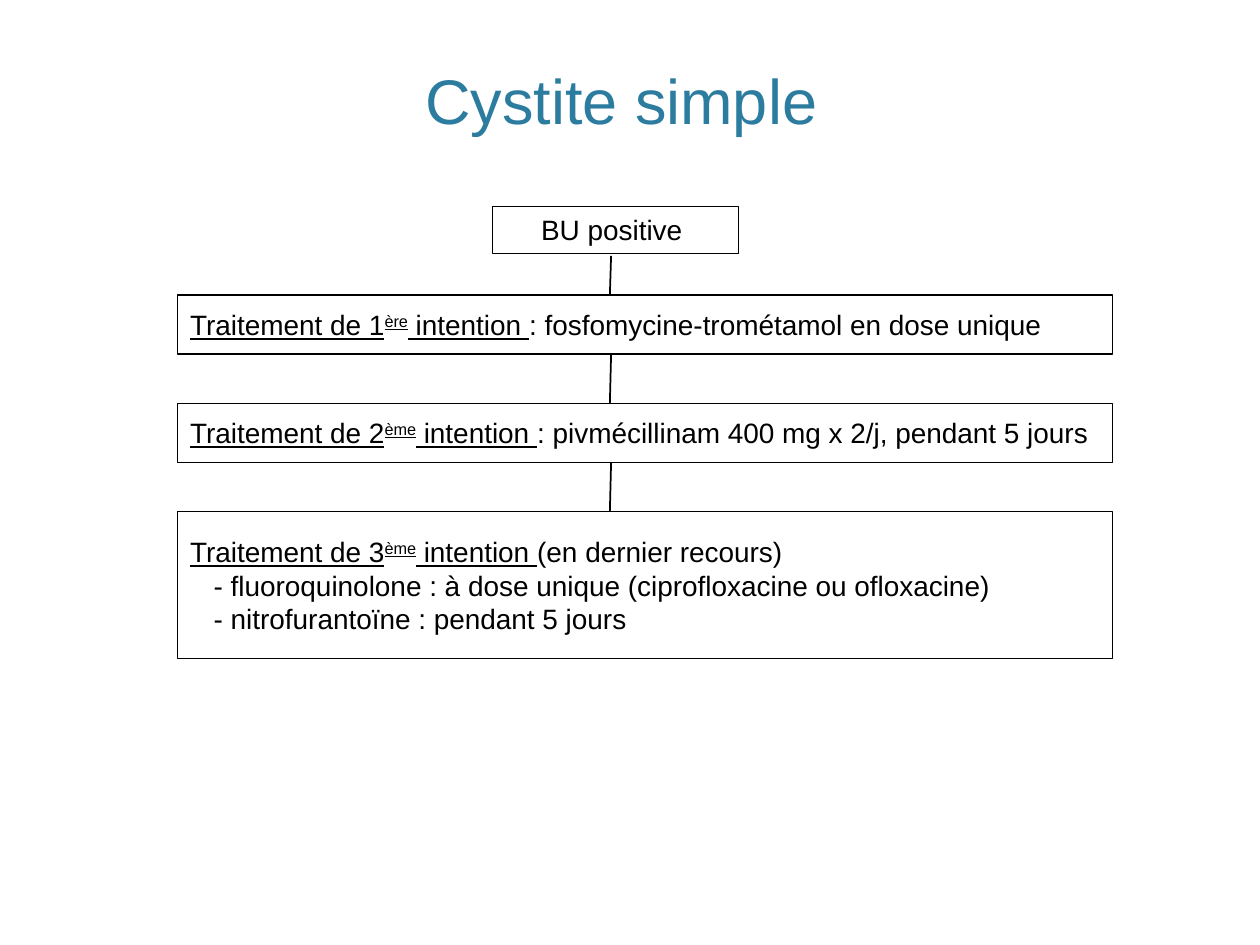
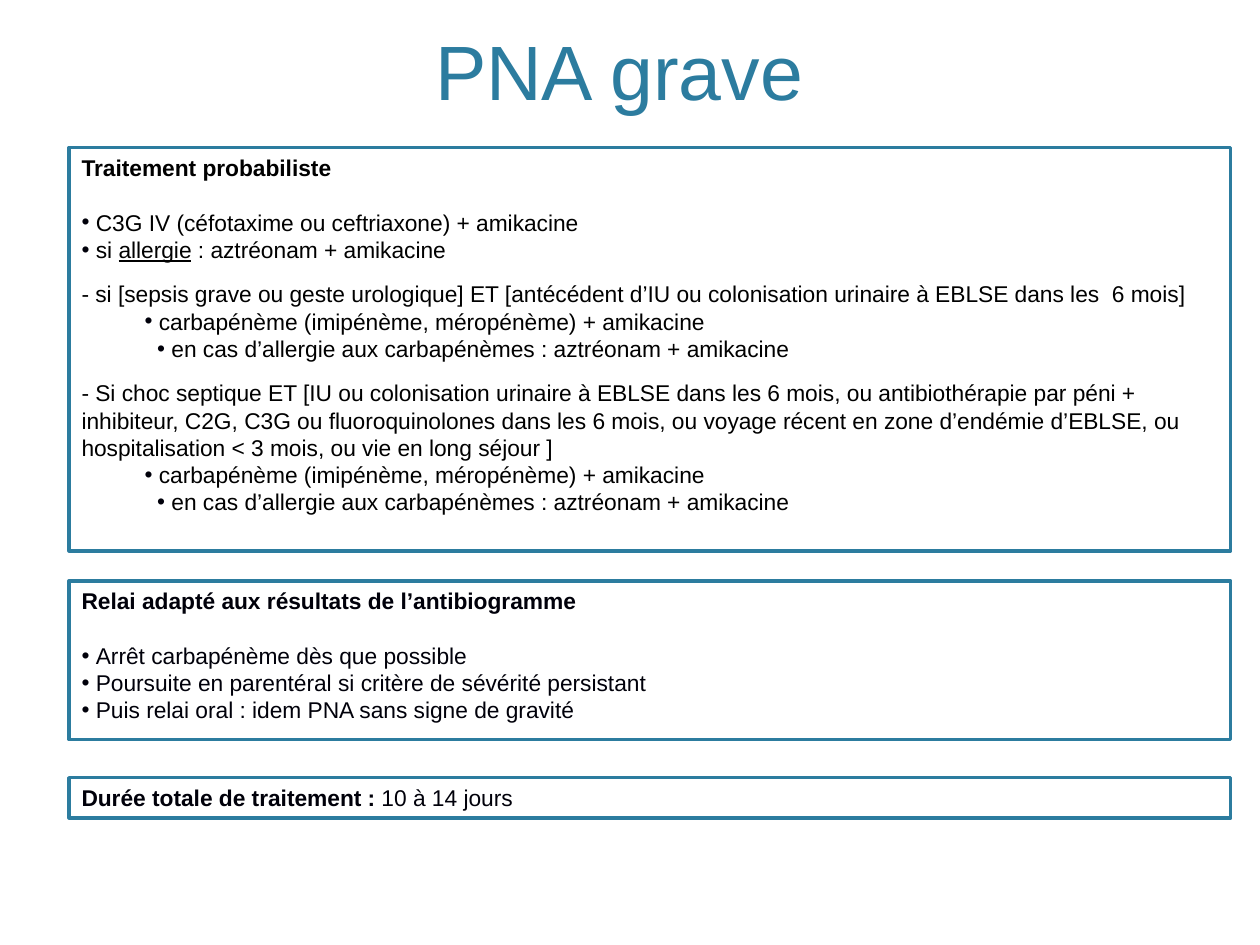
from dataclasses import dataclass

from lxml import etree
from pptx import Presentation
from pptx.dml.color import RGBColor
from pptx.enum.shapes import MSO_CONNECTOR, MSO_SHAPE
from pptx.enum.text import MSO_ANCHOR, MSO_AUTO_SIZE, PP_ALIGN
from pptx.oxml.ns import qn
from pptx.util import Pt

RECT, STRAIGHT = MSO_SHAPE.RECTANGLE, MSO_CONNECTOR.STRAIGHT
TOP, MIDDLE, BOTTOM = MSO_ANCHOR.TOP, MSO_ANCHOR.MIDDLE, MSO_ANCHOR.BOTTOM
LEFT, CENTER = PP_ALIGN.LEFT, PP_ALIGN.CENTER


@dataclass(frozen=True)
class Theme:
    font: str = "Arial"
    accent: str = "2C7C9F"
    black: str = "000000"
    ink: str = "00000A"
    step_size: float = 16
    note_size: float = 13
    leading: float = 1.2  # line height as a share of the type size
    hang: float = 8.2  # width kept for a bullet


T = Theme()

# Content: a paragraph is (runs, format); a run is (text, style)
U, B, SUP = {"underline": True}, {"bold": True}, {"underline": True, "sup": True}
BULLET = {"bullet": True}
AFTER_HEAD = {"bullet": True, "before": 15.6}
NEW_CASE = {"before": 9.8}
DASH = {"left": 13.5}


def intention(rank, suffix, rest):
    return [(f"Traitement de {rank}", U), (suffix, SUP), (" intention ", U), (rest, {})], {}


def plain(text, fmt):
    return [(text, {})], fmt


CARBAPENEM = [
    plain("carbapénème (imipénème, méropénème) + amikacine", {"bullet": True, "left": 36}),
    plain("en cas d’allergie aux carbapénèmes : aztréonam + amikacine",
          {"bullet": True, "left": 43.2}),
]

CYSTITIS = {
    "title": "Cystite simple ", "size": 36, "at": (43.2, 22.3, 633.6, 59.8),
    "start": [plain("BU positive ", {})],
    "steps": [
        (33.8, [intention(1, "ère", ": fosfomycine-trométamol en dose unique")]),
        (33.8, [intention(2, "ème", ": pivmécillinam 400 mg x 2/j, pendant 5 jours")]),
        (84.2, [
            intention(3, "ème", "(en dernier recours)"),
            plain("- fluoroquinolone : à dose unique (ciprofloxacine ou ofloxacine)", DASH),
            plain("- nitrofurantoïne : pendant 5 jours", DASH),
        ]),
    ],
}

SEVERE_PNA = {
    "title": "PNA grave ", "size": 44, "at": (43.2, 8.6, 633.6, 61.2),
    "panels": [  # top, height, colour, paragraphs
        (84.4, 230.4, T.black, [
            ([("Traitement probabiliste", B)], {}),
            plain("C3G IV (céfotaxime ou ceftriaxone) + amikacine", AFTER_HEAD),
            ([("si ", {}), ("allergie", U), (" : aztréonam + amikacine", {})], BULLET),
            plain("- si [sepsis grave ou geste urologique] ET [antécédent d’IU ou colonisation "
                  "urinaire à EBLSE dans les  6 mois]", NEW_CASE),
            *CARBAPENEM,
            plain("- Si choc septique ET [IU ou colonisation urinaire à EBLSE dans les 6 mois, "
                  "ou antibiothérapie par péni + inhibiteur, C2G, C3G ou fluoroquinolones dans "
                  "les 6 mois, ou voyage récent en zone d’endémie d’EBLSE, ou hospitalisation "
                  "< 3 mois, ou vie en long séjour ]", NEW_CASE),
            *CARBAPENEM,
        ]),
        (332, 90.7, T.ink, [
            ([("Relai adapté aux résultats de l’antibiogramme", B)], {}),
            plain("Arrêt carbapénème dès que possible", AFTER_HEAD),
            plain("Poursuite en parentéral si critère de sévérité persistant", BULLET),
            plain("Puis relai oral : idem PNA sans signe de gravité", BULLET),
        ]),
        (444.4, 23, T.ink, [
            ([("Durée totale de traitement : ", B), ("10 à 14 jours", {})], {}),
        ]),
    ],
}


# Text
def style_run(r, size, color, style):
    values = {"name": T.font, "size": Pt(size), **style}
    if values.pop("sup", False):
        r._r.get_or_add_rPr().set("baseline", "30000")
    for key, value in values.items():
        setattr(r.font, key, value)
    r.font.color.rgb = RGBColor.from_string(color)


def format_paragraph(p, size, fmt):
    left = fmt.get("left", 0)
    hang = T.hang if fmt.get("bullet") else 0
    pPr = p._p.get_or_add_pPr()
    pPr.set("marL", str(Pt(left + hang)))
    pPr.set("indent", str(-Pt(hang)))
    p.line_spacing = Pt(round(size * T.leading, 1))
    p.space_before = Pt(fmt.get("before", 0))
    if hang:
        color = etree.SubElement(pPr, qn("a:buClr"))
        etree.SubElement(color, qn("a:srgbClr")).set("val", T.ink)
        etree.SubElement(pPr, qn("a:buFont")).set("typeface", T.font)
        etree.SubElement(pPr, qn("a:buChar")).set("char", "•")


def fill_text(tf, paragraphs, size, color, align):
    for i, (runs, fmt) in enumerate(paragraphs):
        p = tf.paragraphs[0] if i == 0 else tf.add_paragraph()
        format_paragraph(p, size, fmt)
        p.alignment = align
        for text, style in runs:
            r = p.add_run()
            r.text = text
            style_run(r, size, color, style)


# Shapes
def place(values):
    return [Pt(v) for v in values]


def add_titled_slide(prs, content):
    s = prs.slides.add_slide(prs.slide_layouts[5])
    sp = s.shapes.title
    sp.left, sp.top, sp.width, sp.height = place(content["at"])
    tf = sp.text_frame
    tf.auto_size, tf.vertical_anchor = MSO_AUTO_SIZE.NONE, BOTTOM
    p = tf.paragraphs[0]
    p.alignment = CENTER
    r = p.add_run()
    r.text = content["title"]
    style_run(r, content["size"], T.accent, {})
    return s


def add_box(s, at, paragraphs, size, color, line, width, anchor=TOP, align=LEFT):
    sp = s.shapes.add_shape(RECT, *place(at))
    sp.shadow.inherit = False
    sp.fill.background()
    sp.line.color.rgb = RGBColor.from_string(line)
    sp.line.width = Pt(width)
    tf = sp.text_frame
    tf.word_wrap, tf.vertical_anchor = True, anchor
    fill_text(tf, paragraphs, size, color, align)


def add_link(s, top, bottom):
    line = s.shapes.add_connector(STRAIGHT, *place((349.2, top, 348.5, bottom)))
    line.line.color.rgb = RGBColor.from_string(T.black)
    line.line.width = Pt(1)
    etree.SubElement(line._element.spPr, qn("a:effectLst"))


# Slides
def build_cystitis(prs):
    s = add_titled_slide(prs, CYSTITIS)
    look = {"size": T.step_size, "color": T.black, "line": T.black, "width": 0.75}
    add_box(s, (281.5, 118, 140.6, 26.9), CYSTITIS["start"], align=CENTER, **look)
    link_top, top, gap = 146.2, 168.6, 28
    for height, paragraphs in CYSTITIS["steps"]:
        add_box(s, (101.5, top, 534.3, height), paragraphs, anchor=MIDDLE, **look)
        add_link(s, link_top, top)
        link_top = top + height
        top = link_top + gap


def build_severe_pna(prs):
    s = add_titled_slide(prs, SEVERE_PNA)
    for top, height, color, paragraphs in SEVERE_PNA["panels"]:
        add_box(s, (39.5, top, 663.8, height), paragraphs, T.note_size, color, T.accent, 2)


def main():
    prs = Presentation()
    prs.slide_width, prs.slide_height = Pt(720), Pt(540)
    build_cystitis(prs)
    build_severe_pna(prs)
    prs.save("out.pptx")


if __name__ == "__main__":
    main()
